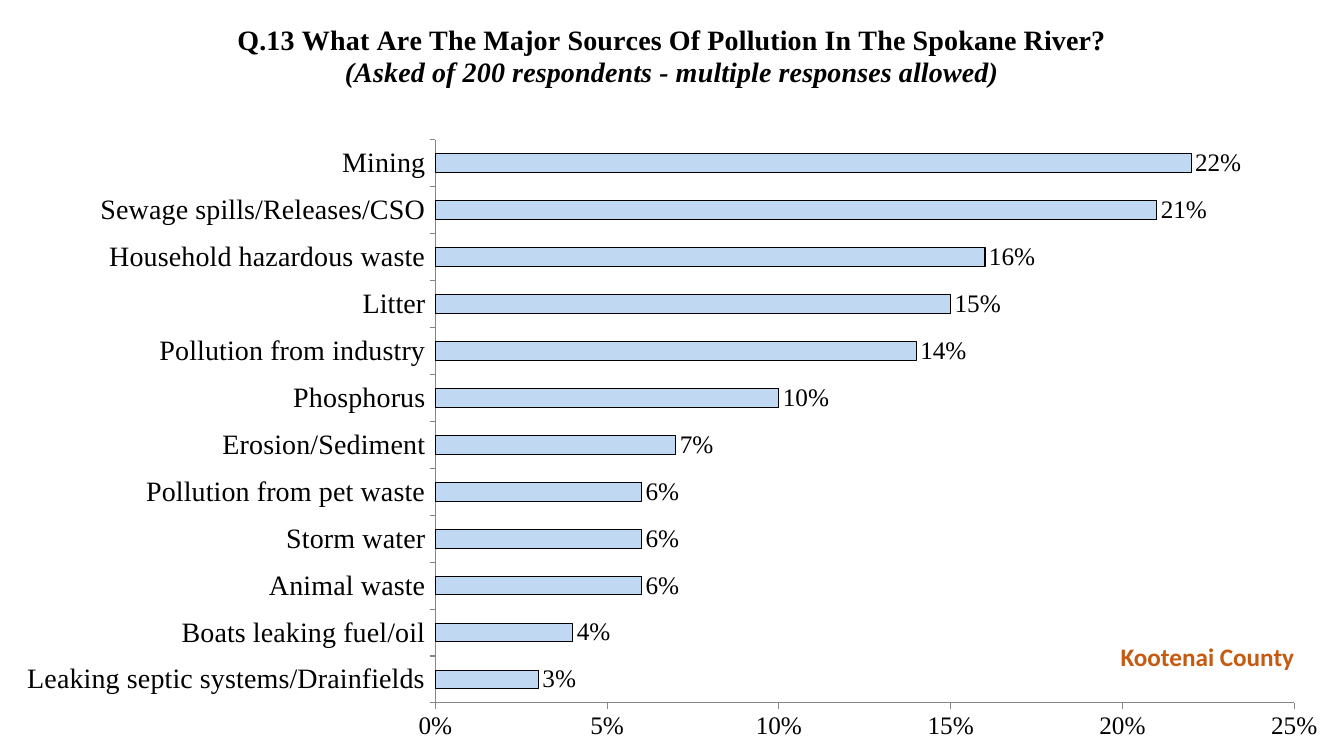
from dataclasses import dataclass

from pptx import Presentation
from pptx.chart.chart import Chart
from pptx.chart.data import CategoryChartData
from pptx.dml.color import RGBColor
from pptx.enum.chart import XL_CHART_TYPE, XL_LABEL_POSITION, XL_TICK_MARK
from pptx.enum.text import PP_ALIGN
from pptx.oxml import parse_xml
from pptx.oxml.ns import nsdecls
from pptx.slide import Slide
from pptx.text.text import Font, _Paragraph
from pptx.util import Cm, Pt

COLORS = {"text": "000000", "bar": "C1D8F2", "axis": "868686", "county": "C55A11"}
SERIF = "Times New Roman"
SANS = "Calibri"
SLIDE_WIDTH, SLIDE_HEIGHT = Cm(33.87), Cm(19.05)
PLOT_LAYOUT = {"x": 0.324, "y": 0.185, "w": 0.639, "h": 0.745}


@dataclass(frozen=True)
class PollutionSource:
    name: str
    share: float


@dataclass(frozen=True)
class TextStyle:
    size: int
    face: str = SERIF
    color: str = "text"
    bold: bool = False
    italic: bool = False


SOURCES = [
    PollutionSource("Mining", 0.22),
    PollutionSource("Sewage spills/Releases/CSO", 0.21),
    PollutionSource("Household hazardous waste", 0.16),
    PollutionSource("Litter", 0.15),
    PollutionSource("Pollution from industry", 0.14),
    PollutionSource("Phosphorus", 0.10),
    PollutionSource("Erosion/Sediment", 0.07),
    PollutionSource("Pollution from pet waste", 0.06),
    PollutionSource("Storm water", 0.06),
    PollutionSource("Animal waste", 0.06),
    PollutionSource("Boats leaking fuel/oil", 0.04),
    PollutionSource("Leaking septic systems/Drainfields", 0.03),
]
TITLE_LINES = [
    ("Q.13 What Are The Major Sources Of Pollution In The Spokane River?",
     TextStyle(20, bold=True)),
    ("(Asked of 200 respondents - multiple responses allowed)",
     TextStyle(20, bold=True, italic=True)),
]


def rgb(name: str) -> RGBColor:
    return RGBColor.from_string(COLORS[name])


def style_font(font: Font, style: TextStyle) -> None:
    font.name = style.face
    font.size = Pt(style.size)
    font.bold = style.bold
    font.italic = style.italic
    font.color.rgb = rgb(style.color)


def add_span(para: _Paragraph, text: str, style: TextStyle) -> None:
    para.alignment = PP_ALIGN.CENTER
    span = para.add_run()
    span.text = text
    style_font(span.font, style)


def add_title(chart: Chart) -> None:
    chart.has_title = True
    frame = chart.chart_title.text_frame
    for index, (text, style) in enumerate(TITLE_LINES):
        para = frame.add_paragraph() if index else frame.paragraphs[0]
        add_span(para, text, style)
    chart.chart_title.include_in_layout = False


def place_plot(chart: Chart) -> None:
    """Fix the inner plot area to PLOT_LAYOUT, in fractions of the chart."""
    modes = "".join(f'<c:{side}Mode val="edge"/>' for side in "xy")
    sizes = "".join(f'<c:{key} val="{value}"/>' for key, value in PLOT_LAYOUT.items())
    area = chart.element.chart.plotArea
    for layout in area.xpath("c:layout"):
        area.remove(layout)
    area.insert(0, parse_xml(
        f'<c:layout {nsdecls("c")}><c:manualLayout><c:layoutTarget val="inner"/>'
        f"{modes}{sizes}</c:manualLayout></c:layout>"))


def style_axes(chart: Chart) -> None:
    for axis, size in ((chart.category_axis, 20), (chart.value_axis, 18)):
        axis.has_major_gridlines = False
        axis.major_tick_mark = XL_TICK_MARK.OUTSIDE
        axis.minor_tick_mark = XL_TICK_MARK.NONE
        axis.format.line.color.rgb = rgb("axis")
        axis.format.line.width = Pt(0.75)
        style_font(axis.tick_labels.font, TextStyle(size))
    shares = chart.value_axis
    shares.minimum_scale, shares.maximum_scale, shares.major_unit = 0, 0.25, 0.05
    shares.tick_labels.number_format = "0%"
    shares.tick_labels.number_format_is_linked = False


def style_bars(chart: Chart) -> None:
    plot = chart.plots[0]
    plot.gap_width = 150
    plot.vary_by_categories = False
    bars = plot.series[0]
    bars.format.fill.solid()
    bars.format.fill.fore_color.rgb = rgb("bar")
    bars.format.line.color.rgb = rgb("text")
    bars.format.line.width = Pt(0.75)
    labels = bars.data_labels
    labels.show_value = True
    labels.position = XL_LABEL_POSITION.OUTSIDE_END
    labels.number_format = "0%"
    labels.number_format_is_linked = False
    style_font(labels.font, TextStyle(18))


def add_source_chart(page: Slide) -> None:
    data = CategoryChartData(number_format="0%")
    bottom_up = SOURCES[::-1]
    data.categories = [source.name for source in bottom_up]
    data.add_series("Series 1", [source.share for source in bottom_up])
    chart = page.shapes.add_chart(
        XL_CHART_TYPE.BAR_CLUSTERED, 0, 0, SLIDE_WIDTH, SLIDE_HEIGHT, data).chart
    chart.has_legend = False
    style_font(chart.font, TextStyle(10, SANS))
    add_title(chart)
    place_plot(chart)
    style_axes(chart)
    style_bars(chart)


def add_county_label(page: Slide) -> None:
    box = page.shapes.add_textbox(Cm(25.17), Cm(16.03), Cm(10.52), Cm(1.03))
    box.text_frame.word_wrap = True
    add_span(box.text_frame.paragraphs[0], "Kootenai County",
             TextStyle(18, SANS, "county", bold=True))


def main() -> None:
    deck = Presentation()
    deck.slide_width, deck.slide_height = SLIDE_WIDTH, SLIDE_HEIGHT
    page = deck.slides.add_slide(deck.slide_layouts[6])
    add_source_chart(page)
    add_county_label(page)
    deck.save("out.pptx")


if __name__ == "__main__":
    main()
